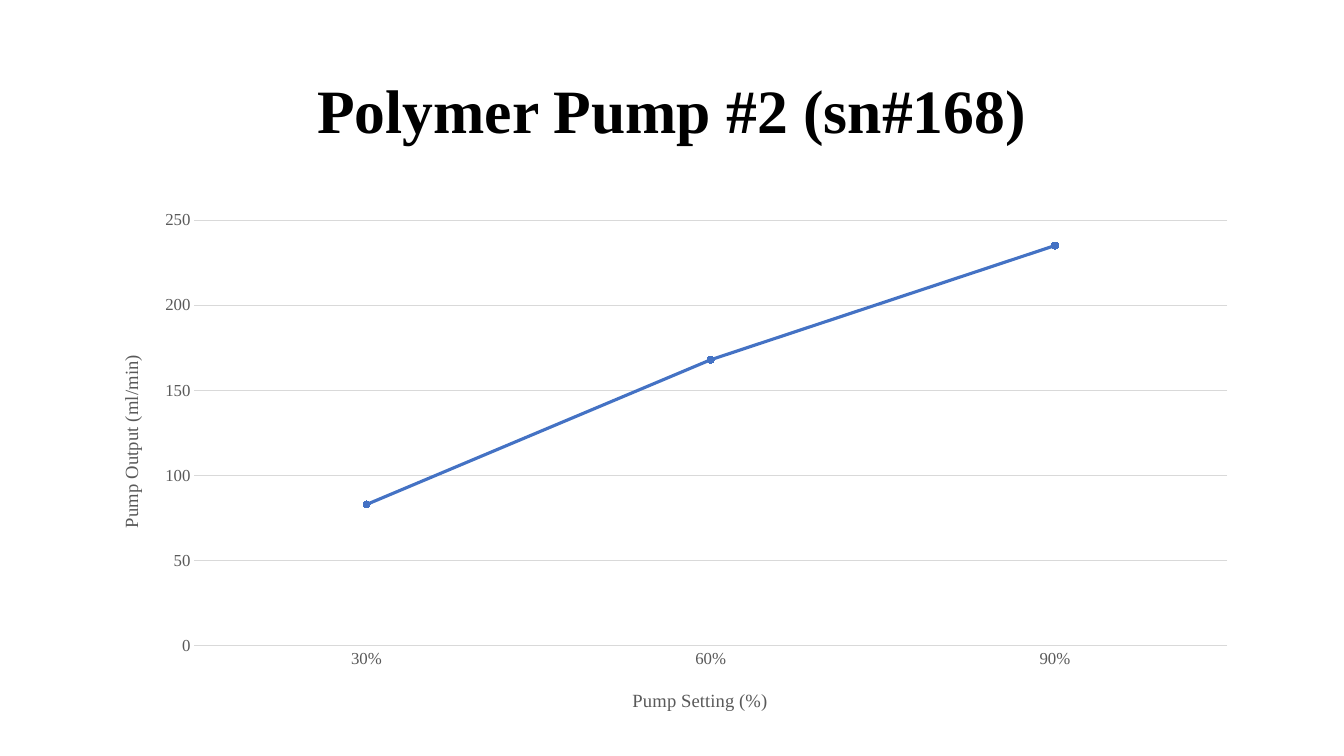
from lxml import etree
from pptx import Presentation
from pptx.chart.data import CategoryChartData
from pptx.dml.color import RGBColor
from pptx.enum import chart as ch, text
from pptx.oxml import parse_xml
from pptx.oxml.ns import nsdecls, qn
from pptx.util import Cm, Pt

BLACK = RGBColor(0x00, 0x00, 0x00)
GRAY = RGBColor(0x59, 0x59, 0x59)
GRID = RGBColor(0xD9, 0xD9, 0xD9)
BLUE = RGBColor(0x44, 0x72, 0xC4)
FONT = "Times New Roman"


def style_font(font, size, color, bold=False):
    """Set the typeface, size, colour and weight of a font."""
    font.name, font.size, font.bold = FONT, Pt(size), bold
    font.color.rgb = color


def manual_layout(**values):
    """Return a chart layout element with the given fractions."""
    layout = parse_xml(f"<c:layout {nsdecls('c')}><c:manualLayout/></c:layout>")
    for tag, val in values.items():
        etree.SubElement(layout[0], qn(f"c:{tag}")).set("val", str(val))
    return layout


def set_layout(parent, layout):
    """Replace the layout of a plot area or an axis title."""
    old = parent.find(qn("c:layout"))
    if old is not None:
        parent.remove(old)
    tx = parent.find(qn("c:tx"))
    parent.insert(0 if tx is None else 1, layout)


def style_axis(axis, title, x, y):
    """Format an axis and place its title at a fraction of the chart."""
    axis.major_tick_mark = axis.minor_tick_mark = ch.XL_TICK_MARK.NONE
    style_font(axis.tick_labels.font, 12, GRAY)
    r = axis.axis_title.text_frame.paragraphs[0].add_run()
    r.text = title
    style_font(r.font, 13.3, GRAY)
    set_layout(axis.axis_title._element,
               manual_layout(xMode="edge", yMode="edge", x=x, y=y))


def add_title(s, left, top, width, height):
    """Add the centred slide title in the given box."""
    tf = s.shapes.add_textbox(left, top, width, height).text_frame
    tf.word_wrap = True
    tf.vertical_anchor = text.MSO_ANCHOR.MIDDLE
    p = tf.paragraphs[0]
    p.alignment = text.PP_ALIGN.CENTER
    p.line_spacing = 0.9
    r = p.add_run()
    r.text = "Polymer Pump #2 (sn#168)"
    style_font(r.font, 44, BLACK, True)


def add_pump_chart(s, left, top, width, height):
    """Add the line chart of pump output against setting in the given box."""
    data = CategoryChartData()
    data.categories = [0.3, 0.6, 0.9]
    data.categories.number_format = "0%"
    data.add_series("Series 1", [83, 168, 235])
    chart = s.shapes.add_chart(ch.XL_CHART_TYPE.LINE_MARKERS_STACKED,
                               left, top, width, height, data).chart
    chart.has_legend = chart.has_title = False
    style_font(chart.font, 12, GRAY)

    cat, val = chart.category_axis, chart.value_axis
    style_axis(cat, "Pump Setting (%)", 0.463, 0.92)
    cat.tick_labels.number_format = "0%"
    cat.tick_labels.number_format_is_linked = False
    cat.format.line.color.rgb = GRID
    cat.format.line.width = Pt(0.75)
    style_axis(val, "Pump Output (ml/min)", 0.02, 0.286)
    val.minimum_scale, val.maximum_scale, val.major_unit = 0, 250, 50
    val.format.line.fill.background()
    val.has_major_gridlines = True
    val.major_gridlines.format.line.color.rgb = GRID
    val.major_gridlines.format.line.width = Pt(0.75)

    plot = chart.plots[0]
    plot.vary_by_categories = False
    ser = plot.series[0]
    ser.smooth = False
    ser.format.line.color.rgb = BLUE
    ser.format.line.width = Pt(2.25)
    ser.marker.style = ch.XL_MARKER_STYLE.CIRCLE
    ser.marker.size = 5
    ser.marker.format.fill.solid()
    ser.marker.format.fill.fore_color.rgb = BLUE
    ser.marker.format.line.color.rgb = BLUE

    area = chart._chartSpace.find(".//" + qn("c:plotArea"))
    set_layout(area, manual_layout(layoutTarget="inner", xMode="edge", yMode="edge",
                                   x=0.088, y=0.036, w=0.891, h=0.81))


def main():
    """Build and save the slide."""
    prs = Presentation()
    prs.slide_width, prs.slide_height = Cm(33.87), Cm(19.05)
    s = prs.slides.add_slide(prs.slide_layouts[6])
    left, width = Cm(2.33), Cm(29.21)
    add_title(s, left, Cm(1.01), width, Cm(3.68))
    add_pump_chart(s, left, Cm(5.07), width, Cm(13.25))
    prs.save("out.pptx")


if __name__ == "__main__":
    main()
